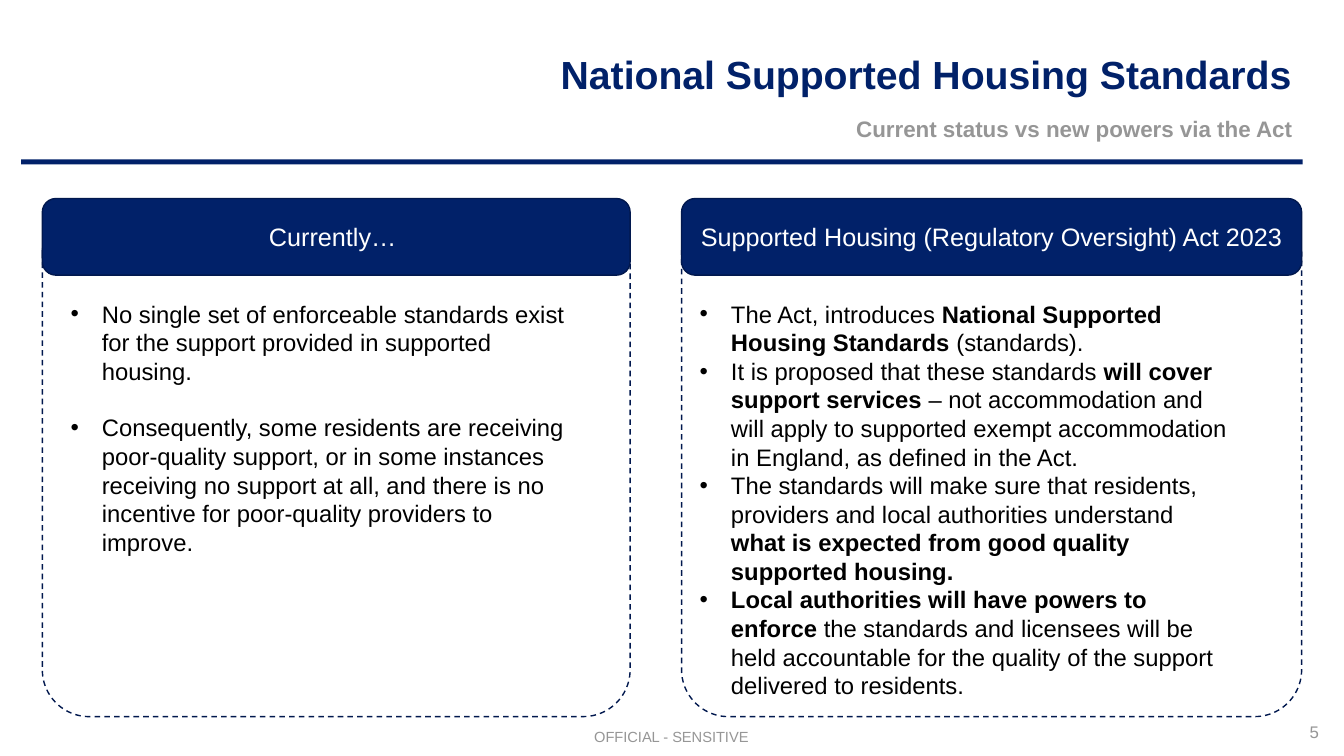
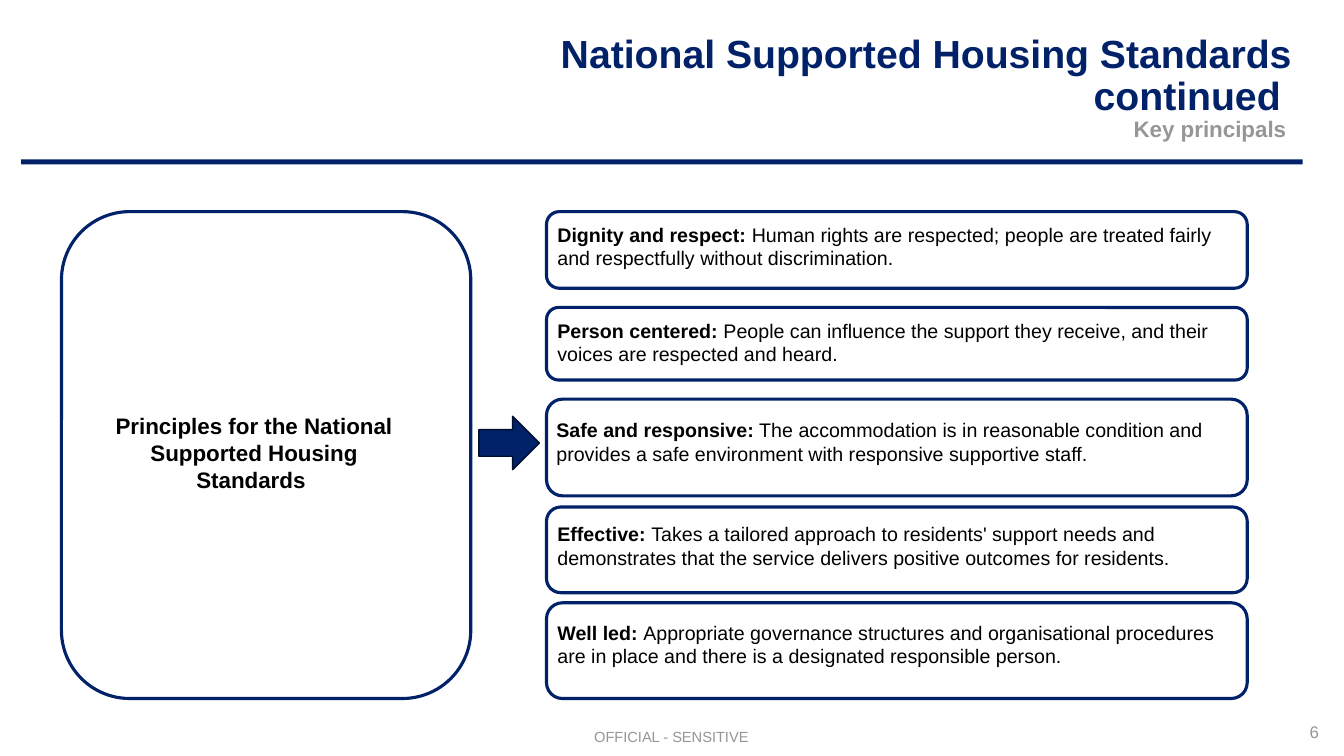
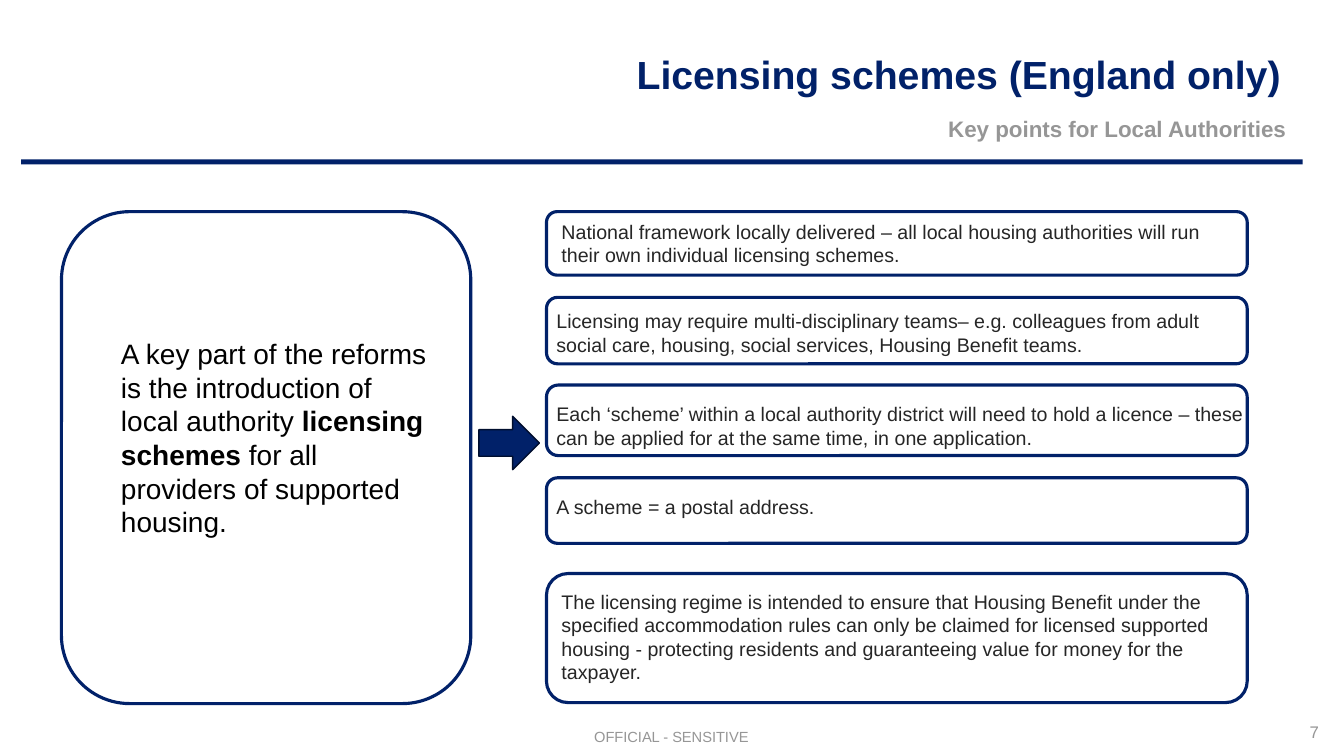
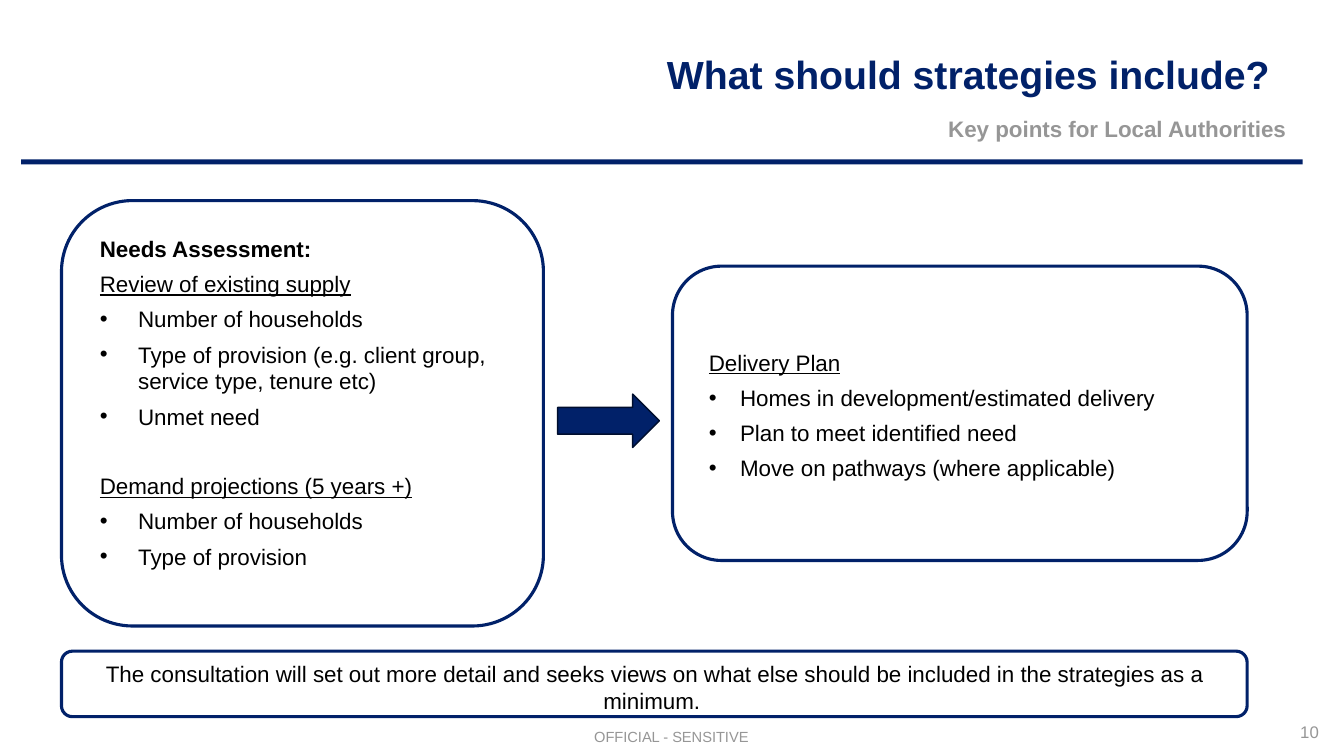
import pptx
import pptx.util
import pptx.dml.color
import pptx.enum.dml
import pptx.enum.shapes
import pptx.enum.text
import pptx.oxml.ns
import lxml.etree

In, Pt = pptx.util.Inches, pptx.util.Pt
SHAPE = pptx.enum.shapes.MSO_SHAPE
ALIGN = pptx.enum.text.PP_ALIGN
ANCHOR = pptx.enum.text.MSO_ANCHOR

# Shared style
C = {"navy": "012169", "edge": "01184E", "arrow": "000E2E", "grey": "969696",
     "black": "000000", "ink": "262626", "white": "FFFFFF"}
FONT = "Arial"
LEFT, RIGHT = 0.21, 12.92
CARD_X, CARD_W = 5.42, 6.95
LEAD_X, LEAD_W = 0.61, 4.06
TITLE_TOP, TITLE_H = 0.43, 0.67
SUB = (LEFT, 1.12, RIGHT - LEFT, 0.44)
RULE = (LEFT, 1.58, RIGHT - LEFT, 0.05)
FOOTER = (5, 7.19, 3.32, 0.25)
NUMBER = (12.62, 7.11, 0.56, 0.4)
PANEL_ADJ, HEADER_ADJ = 0.092, 0.177
SMALL_ARROW = (4.75, 4.13, 0.6, 0.53)

# Text: **bold**; a paragraph is a string or (string, options)
BUL, WIDE_BUL, UNDER = {"indent": 0.31}, {"indent": 0.38}, {"underline": True}

COMPARISON = [  # heading, left, width, list box, paragraphs
    ("Currently… ", 0.42, 5.83, (0.6, 2.92, 5.13, 2.98), [
        ("No single set of enforceable standards exist for the support provided in "
         "supported housing.", BUL),
        ("Consequently, some residents are receiving poor-quality support, or in some "
         "instances receiving no support at all, and there is no incentive for "
         "poor-quality providers to improve.", {**BUL, "before": 20})]),
    ("Supported Housing (Regulatory Oversight) Act 2023", 6.76, 6.15, (6.84, 2.92, 5.49, 4.11), [
        ("The Act, introduces **National Supported Housing Standards **(standards).", BUL),
        ("It is proposed that these standards **will cover support services **– not "
         "accommodation and will apply to supported exempt accommodation in England, as "
         "defined in the Act.", BUL),
        ("The standards will make sure that residents, providers and local authorities "
         "understand **what is expected from good quality supported housing.**", BUL),
        ("**Local authorities will have powers to enforce** the standards and licensees "
         "will be held accountable for the quality of the support delivered to "
         "residents.", BUL)]),
]

PRINCIPLES = [  # card top, card height, text left, text top, text width, text
    (2.1, 0.76, 5.43, 2.16, 6.8, "**Dignity and respect: **Human rights are respected; people are "
     "treated fairly and respectfully without discrimination."),
    (3.05, 0.72, 5.43, 3.11, 6.8, "**Person centered: **People can influence the support they "
     "receive, and their voices are respected and heard."),
    (3.96, 0.96, 5.42, 4.1, 6.81, "**Safe and responsive:** The accommodation is in reasonable "
     "condition and provides a safe environment with responsive supportive staff."),
    (5.03, 0.85, 5.43, 5.13, 6.8, "**Effective: **Takes a tailored approach to residents' support "
     "needs and demonstrates that the service delivers positive outcomes for residents."),
    (5.98, 0.95, 5.43, 6.11, 6.8, "**Well led: **Appropriate governance structures and "
     "organisational procedures are in place and there is a designated responsible person."),
]

LICENSING = [
    (2.1, 0.63, 5.47, 2.13, 6.9, "National framework locally delivered – all local housing "
     "authorities will run their own individual licensing schemes."),
    (2.95, 0.66, 5.42, 3.02, 7.02, "Licensing may require multi-disciplinary teams– e.g. "
     "colleagues from adult social care, housing, social services, Housing Benefit teams."),
    (3.82, 0.7, 5.42, 3.94, 7.02, "Each ‘scheme’ within a local authority district will need to "
     "hold a licence – these can be applied for at the same time, in one application."),
    (4.74, 0.65, 5.42, 4.86, 3.86, "A scheme = a postal address."),
    (5.69, 1.28, 5.47, 5.8, 6.63, "The licensing regime is intended to ensure that Housing Benefit "
     "under the specified accommodation rules can only be claimed for licensed supported "
     "housing - protecting residents and guaranteeing value for money for the taxpayer."),
]

NEEDS = [
    "**Needs Assessment:**",
    ("Review of existing supply", UNDER),
    ("Number of households", WIDE_BUL),
    ("Type of provision (e.g. client group, service type, tenure etc)", WIDE_BUL),
    ("Unmet need", WIDE_BUL),
    ("Demand projections (5 years +)", {**UNDER, "before": 24.4}),
    ("Number of households", WIDE_BUL),
    ("Type of provision", WIDE_BUL),
]
DELIVERY = [
    ("Delivery Plan", UNDER),
    ("Homes in development/estimated delivery", BUL),
    ("Plan to meet identified need", BUL),
    ("Move on pathways (where applicable)", BUL),
]
NOTE = ("The consultation will set out more detail and seeks views on what else should be "
        "included in the strategies as a minimum. ")


# Helpers
def rgb(name):
    return pptx.dml.color.RGBColor.from_string(C[name])


def place(sp, box):
    for name, value in zip(("left", "top", "width", "height"), box):
        setattr(sp, name, In(value))


def set_bullet(p, indent):
    pPr = p._p.get_or_add_pPr()
    pPr.set("marL", str(In(indent)))
    pPr.set("indent", str(-In(indent)))
    tag = "a:buChar" if indent else "a:buNone"
    bu = lxml.etree.SubElement(pPr, pptx.oxml.ns.qn(tag))
    if indent:
        bu.set("char", "•")


def write(sp, paras, size, color="black", align=ALIGN.LEFT, anchor=ANCHOR.TOP,
          bold=False, after=0, spacing=1.0):
    tf = sp.text_frame
    for name, value in {"word_wrap": True, "vertical_anchor": anchor,
                        "auto_size": pptx.enum.text.MSO_AUTO_SIZE.NONE}.items():
        setattr(tf, name, value)
    for i, item in enumerate(paras):
        text, opts = (item, {}) if isinstance(item, str) else item
        p = tf.add_paragraph() if i else tf.paragraphs[0]
        set_bullet(p, opts.get("indent", 0))
        for name, value in {"alignment": align, "line_spacing": spacing,
                            "space_before": Pt(opts.get("before", 0)),
                            "space_after": Pt(after)}.items():
            setattr(p, name, value)
        for j, part in enumerate(text.split("**")):
            if not part:
                continue
            r = p.add_run()
            r.text = part
            for name, value in {"name": FONT, "size": Pt(size), "bold": bold or j % 2 == 1,
                                "underline": opts.get("underline", False)}.items():
                setattr(r.font, name, value)
            r.font.color.rgb = rgb(color)


def add_text(s, box, paras, size, **fmt):
    write(s.shapes.add_textbox(*map(In, box)), paras, size, **fmt)


def fill_list(s, idx, box, paras, size, **fmt):
    sp = s.placeholders[idx]
    place(sp, box)
    write(sp, paras, size, **fmt)


def add_shape(s, kind, box, fill=None, line="navy", width=2.25, adj=None, dash=False):
    sp = s.shapes.add_shape(kind, *map(In, box))
    sp.shadow.inherit = False
    if fill:
        sp.fill.solid()
        sp.fill.fore_color.rgb = rgb(fill)
    else:
        sp.fill.background()
    if line:
        sp.line.color.rgb = rgb(line)
        sp.line.width = Pt(width)
    else:
        sp.line.fill.background()
    if dash:
        sp.line.dash_style = pptx.enum.dml.MSO_LINE.DASH
    if adj:
        sp.adjustments[0] = adj
    return sp


def add_outline(s, box):
    return add_shape(s, SHAPE.ROUNDED_RECTANGLE, box)


def add_arrow(s, box):
    add_shape(s, SHAPE.RIGHT_ARROW, box, "navy", "arrow", 1)


def add_cards(s, cards):
    for top, height, x, text_top, width, text in cards:
        add_outline(s, (CARD_X, top, CARD_W, height))
        color = "black" if "**" in text else "ink"
        add_text(s, (x, text_top, width, height), [text], 14, color=color)


def start_slide(prs, layout, title, title_left, subtitle, number, title_right=12.91):
    s = prs.slides.add_slide(layout)
    place(s.shapes.title, (title_left, TITLE_TOP, title_right - title_left, TITLE_H))
    write(s.shapes.title, [title], 28, "navy", ALIGN.RIGHT, ANCHOR.MIDDLE, bold=True, spacing=0.9)
    write(s.placeholders[1], [subtitle], 16, "grey", ALIGN.RIGHT, bold=True, spacing=0.9)
    write(s.placeholders[3], ["OFFICIAL - SENSITIVE"], 10.5, "grey", ALIGN.CENTER, spacing=0.9)
    add_text(s, NUMBER, [number], 12, color="grey", align=ALIGN.RIGHT)
    return s


# Slides
def comparison_slide(s):
    for idx, (heading, x, width, box, paras) in zip((2, 4), COMPARISON):
        add_shape(s, SHAPE.ROUNDED_RECTANGLE, (x, 2.05, width, 5.06), None, "edge", 1,
                  PANEL_ADJ, dash=True)
        header = add_shape(s, SHAPE.ROUNDED_RECTANGLE, (x, 1.97, width, 0.76), "navy", "edge", 1,
                           HEADER_ADJ)
        write(header, [heading], 18, "white", ALIGN.CENTER, ANCHOR.MIDDLE)
        fill_list(s, idx, box, paras, 17)


def principles_slide(s):
    add_outline(s, (LEAD_X, 2.1, LEAD_W, 4.83))
    fill_list(s, 2, (0.96, 4.04, 3.12, 1.23),
              ["Principles for the National Supported Housing Standards "], 16,
              align=ALIGN.CENTER, bold=True)
    add_cards(s, PRINCIPLES)
    add_arrow(s, SMALL_ARROW)


def licensing_slide(s):
    add_outline(s, (LEAD_X, 2.1, LEAD_W, 4.88))
    fill_list(s, 2, (1.1, 3.29, 3.29, 2.3),
              ["A key part of the reforms is the introduction of local authority "
               "**licensing schemes **for all providers of supported housing."], 20)
    add_cards(s, LICENSING)
    add_arrow(s, SMALL_ARROW)


def strategies_slide(s):
    add_outline(s, (LEAD_X, 1.99, 4.78, 4.22))
    fill_list(s, 2, (0.89, 2.28, 4.38, 3.79), NEEDS, 16, after=6)
    add_outline(s, (6.67, 2.64, 5.7, 2.92))
    fill_list(s, 4, (6.93, 3.41, 5.44, 1.43), DELIVERY, 16, after=6)
    add_outline(s, (LEAD_X, 6.46, CARD_X + CARD_W - LEAD_X, 0.65))
    add_text(s, (0.72, 6.5, 11.55, 0.65), [NOTE], 16, align=ALIGN.CENTER)
    add_arrow(s, (5.53, 3.91, 1.01, 0.53))


SLIDES = [  # builder, title, title left, subtitle, page number, further settings
    (comparison_slide, "National Supported Housing Standards", 4.6,
     "Current status vs new powers via the Act", "5", {}),
    (principles_slide, "National Supported Housing Standards continued ", 4.79,
     "Key principals ", "6", {}),
    (licensing_slide, "Licensing schemes (England only) ", 5.73,
     "Key points for Local Authorities ", "7", {}),
    (strategies_slide, "What should strategies include? ", 5.73,
     "Key points for Local Authorities ", "10", {"title_right": 12.8}),
]


def main():
    prs = pptx.Presentation()
    prs.slide_width, prs.slide_height = In(13.33), In(7.5)
    layout = prs.slide_layouts.get_by_name("Comparison")
    for sp in layout.placeholders:
        box = {1: SUB, 3: FOOTER}.get(sp.placeholder_format.idx)
        if box:
            place(sp, box)
    for i, (build, title, left, subtitle, number, extra) in enumerate(SLIDES):
        s = start_slide(prs, layout, title, left, subtitle, number, **extra)
        if i == 0:  # the rule under the titles belongs to the layout
            rule = add_shape(s, SHAPE.RECTANGLE, RULE, "navy", None)
            layout.shapes.element.append(rule.element)
        build(s)
        for sp in list(s.placeholders):
            if not sp.text_frame.text:
                sp.element.getparent().remove(sp.element)
    prs.save("out.pptx")


if __name__ == "__main__":
    main()
